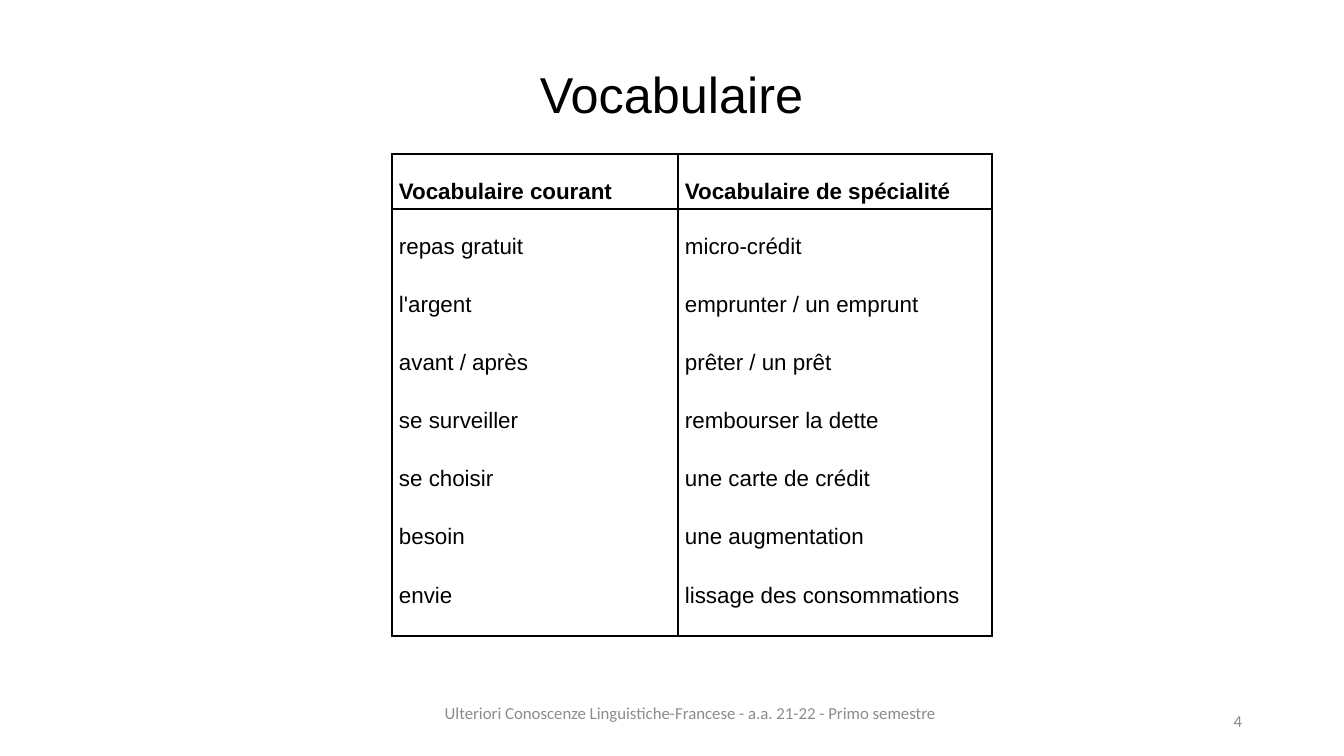
"""Build the French vocabulary slide with its two-column word table."""
from lxml import etree
from pptx import Presentation
from pptx.dml.color import RGBColor
from pptx.enum.text import MSO_ANCHOR, PP_ALIGN
from pptx.oxml.ns import qn
from pptx.util import Pt

WORDS = {
    "Vocabulaire courant": [
        "repas gratuit", "l'argent", "avant / après", "se surveiller",
        "se choisir", "besoin", "envie",
    ],
    "Vocabulaire de spécialité": [
        "micro-crédit", "emprunter / un emprunt", "prêter / un prêt",
        "rembourser la dette", "une carte de crédit", "une augmentation",
        "lissage des consommations",
    ],
}
BLACK = RGBColor(0x00, 0x00, 0x00)
GRAY = RGBColor(0x8C, 0x8C, 0x8C)
CENTER, RIGHT = PP_ALIGN.CENTER, PP_ALIGN.RIGHT
MIDDLE = MSO_ANCHOR.MIDDLE
FOOTER = "Ulteriori Conoscenze Linguistiche-Francese - a.a. 21-22 - Primo semestre"
TEXTS = [
    ("Vocabulaire", (93, 40, 1157, 114), CENTER, "Arial", 36, BLACK, 0.9),
    (FOOTER, (427, 686, 527, 53), CENTER, "Calibri", 12, GRAY, 1.0),
    ("4", (950, 701, 302, 40), RIGHT, "Calibri", 12, GRAY, 1.0),
]
LEFT, TOP = 392, 154
COLS = (286, 314)
ROWS = (55, 427)
INSET = 7
SCALE = 914400 / 100.8


def px(size):
    return round(size * SCALE)


def style(para, face, size, color, bold=False):
    font = para.font
    font.name, font.size, font.bold = face, Pt(size), bold
    font.color.rgb = color


def add_text(slide, text, box, align, face, size, color, space):
    frame = slide.shapes.add_textbox(*map(px, box)).text_frame
    frame.word_wrap = True
    frame.vertical_anchor = MIDDLE
    para = frame.paragraphs[0]
    para.text = text
    para.alignment = align
    para.line_spacing = space
    style(para, face, size, color)


def add_edges(cell):
    props = cell._tc.get_or_add_tcPr()
    for side in ("lnL", "lnR", "lnT", "lnB"):
        line = etree.SubElement(props, qn(f"a:{side}"), w=str(Pt(1)))
        fill = etree.SubElement(line, qn("a:solidFill"))
        etree.SubElement(fill, qn("a:srgbClr"), val=str(BLACK))


def fill_cell(cell, lines, bold):
    cell.margin_left = cell.margin_right = px(INSET)
    cell.margin_top = cell.margin_bottom = 0
    add_edges(cell)
    cell.fill.background()
    cell.text_frame.text = "\n".join(lines)
    for para in cell.text_frame.paragraphs:
        para.line_spacing = 2.0
        para.space_before = Pt(6)
        style(para, "Arial", 16, BLACK, bold)


def add_words(slide):
    box = (LEFT, TOP, sum(COLS), sum(ROWS))
    table = slide.shapes.add_table(len(ROWS), len(COLS), *map(px, box)).table
    table.first_row = table.horz_banding = False
    for row, high in zip(table.rows, ROWS):
        row.height = px(high)
    for col, (head, words) in enumerate(WORDS.items()):
        table.columns[col].width = px(COLS[col])
        fill_cell(table.cell(0, col), [head], True)
        fill_cell(table.cell(1, col), words, False)


def main():
    deck = Presentation()
    deck.slide_width, deck.slide_height = px(1344), px(756)
    slide = deck.slides.add_slide(deck.slide_layouts[6])
    add_words(slide)
    for item in TEXTS:
        add_text(slide, *item)
    deck.save("out.pptx")


if __name__ == "__main__":
    main()
